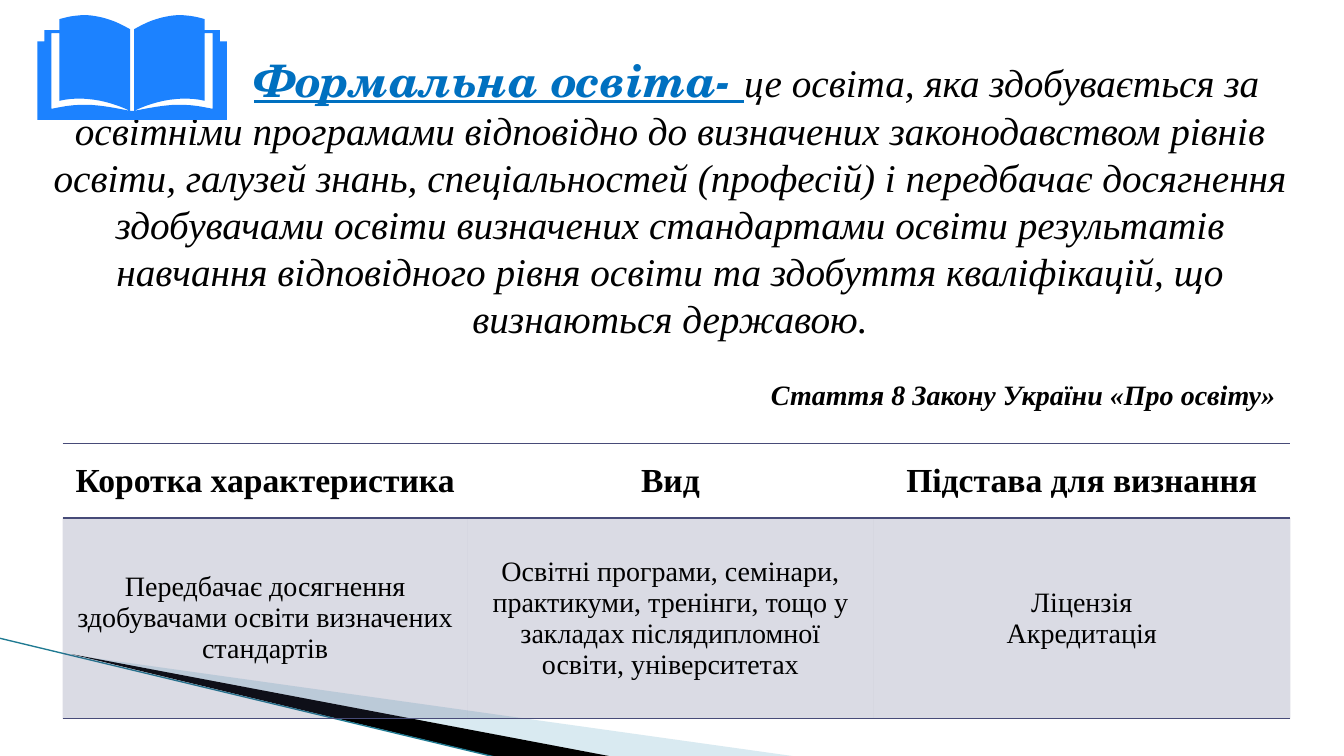
from lxml import etree
from pptx import Presentation
from pptx.dml.color import RGBColor
from pptx.enum.text import MSO_ANCHOR as Anchor, PP_ALIGN as Align
from pptx.oxml.ns import qn
from pptx.util import Inches, Pt

WIDTH, HEIGHT = 13.33, 7.5
SERIF, DISPLAY = "Times New Roman", "TeX Gyre Schola"
BLACK, BLUE, BOOK_BLUE, INDIGO = "000000", "0070C0", "1C82FF", "474B78"
UNITS = 1000  # outline units per inch

DEFINITION = (
    "це освіта, яка здобувається за освітніми програмами відповідно до "
    "визначених законодавством рівнів освіти, галузей знань, спеціальностей "
    "(професій) і передбачає досягнення здобувачами освіти визначених "
    "стандартами освіти результатів навчання відповідного рівня освіти та "
    "здобуття кваліфікацій, що визнаються державою."
)
HEADERS = ["Коротка характеристика", "Вид", "Підстава для визнання"]
DETAILS = [
    "Передбачає досягнення здобувачами освіти визначених стандартів",
    "Освітні програми, семінари, практикуми, тренінги, тощо у закладах "
    "післядипломної освіти, університетах",
    "Ліцензія\nАкредитація",
]

# Right half of the open book: points, or cubic curves of three points
BOOK_CENTRE = 1.31
BOOK_HALF = [
    (1.33, 1.1), ((1.64, 1.04), (1.79, 1.01), (2.11, 1.08)),
    (2.11, 0.33), (2.03, 0.33), (2.03, 1.0),
    ((1.81, 0.95), (1.56, 0.99), (1.33, 1.1)),
    (1.33, 0.29), ((1.47, 0.21), (1.6, 0.16), (1.77, 0.15)),
    ((1.84, 0.15), (1.93, 0.16), (2.03, 0.19)),
    (2.03, 0.3), (2.18, 0.3), (2.18, 0.41), (2.25, 0.41), (2.25, 1.19),
]


def colour(hex_code):
    return RGBColor.from_string(hex_code)


def set_alpha(fill_parent, percent):
    tint = fill_parent.find(".//" + qn("a:srgbClr"))
    etree.SubElement(tint, qn("a:alpha")).set("val", str(percent * 1000))


def add_text(paragraph, text, size=20, font=SERIF, color=BLACK,
             bold=False, italic=False, underline=False, align=Align.CENTER):
    paragraph.alignment = align
    run = paragraph.add_run()
    run.text = text
    style = run.font
    style.size, style.name = Pt(size), font
    style.bold, style.italic, style.underline = bold, italic, underline
    style.color.rgb = colour(color)


def add_outline(slide, points, fill, alpha=None):
    scaled = [(round(x * UNITS), round(y * UNITS)) for x, y in points]
    builder = slide.shapes.build_freeform(
        *scaled[0], scale=Inches(1) / UNITS)
    builder.add_line_segments(scaled[1:], close=True)
    outline = builder.convert_to_shape()
    outline.shadow.inherit = False
    outline.fill.solid()
    outline.fill.fore_color.rgb = colour(fill)
    outline.line.fill.background()
    if alpha:
        set_alpha(outline._element.spPr, alpha)


def flatten(segments, steps=12):
    points = []
    for segment in segments:
        if isinstance(segment[0], tuple):
            curve = [points[-1], *segment]
            for step in range(1, steps + 1):
                t = step / steps
                weights = ((1 - t) ** 3, 3 * t * (1 - t) ** 2,
                           3 * t * t * (1 - t), t ** 3)
                points.append(tuple(
                    sum(w * p[axis] for w, p in zip(weights, curve))
                    for axis in (0, 1)))
        else:
            points.append(segment)
    return points


def add_book(slide):
    right = flatten(BOOK_HALF)
    left = [(2 * BOOK_CENTRE - x, y) for x, y in reversed(right)]
    add_outline(slide, right + left, BOOK_BLUE)


def add_corner_sweep(slide):
    add_outline(slide, [(0.73, 6.5), (7.93, 7.51), (6.08, 7.51)], "A0CBDC", 40)
    add_outline(slide, [(0.71, 6.49), (6.09, 7.51), (4.96, 7.52)], BLACK)
    edge = slide.shapes.add_connector(
        1, Inches(-0.01), Inches(6.33), Inches(4.95), Inches(7.52))
    edge.line.color.rgb = colour("1F7A92")
    edge.line.width = Pt(0.95)
    etree.SubElement(edge._element.spPr, qn("a:effectLst"))


def add_definition(slide):
    title = slide.shapes.title
    title.left, title.top = Inches(0.25), Inches(0.43)
    title.width, title.height = Inches(12.79), Inches(3.74)
    frame = title.text_frame
    frame.word_wrap = True
    frame.vertical_anchor = Anchor.MIDDLE

    definition = frame.paragraphs[0]
    definition._p.get_or_add_pPr().set("indent", str(Inches(1.72)))
    add_text(definition, "Формальна освіта- ", size=32, font=DISPLAY,
             color=BLUE, bold=True, italic=True, underline=True)
    add_text(definition, DEFINITION, size=28, italic=True)

    citation = frame.add_paragraph()
    citation.space_before = Pt(26)
    citation._p.get_or_add_pPr().set("marR", str(Inches(0.29)))
    add_text(citation, "Стаття 8 Закону України «Про освіту»",
             bold=True, italic=True, align=Align.RIGHT)


def set_borders(cell, *visible):
    properties = cell._tc.get_or_add_tcPr()
    for position, side in enumerate(("lnL", "lnR", "lnT", "lnB")):
        border = etree.Element(qn("a:" + side), w=str(Pt(1)))
        if side in visible:
            fill = etree.SubElement(border, qn("a:solidFill"))
            etree.SubElement(fill, qn("a:srgbClr"), val=INDIGO)
        else:
            etree.SubElement(border, qn("a:noFill"))
        properties.insert(position, border)


def add_summary_table(slide):
    widths, heights = (4.02, 4.02, 4.14), (0.74, 1.99)
    table = slide.shapes.add_table(
        2, 3, Inches(0.62), Inches(4.4),
        Inches(sum(widths)), Inches(sum(heights))).table
    table.horz_banding = False
    for column, width in zip(table.columns, widths):
        column.width = Inches(width)
    for row, height in zip(table.rows, heights):
        row.height = Inches(height)

    for r, texts in enumerate((HEADERS, DETAILS)):
        for c, text in enumerate(texts):
            cell = table.cell(r, c)
            cell.vertical_anchor = Anchor.MIDDLE
            frame = cell.text_frame
            for i, line in enumerate(text.split("\n")):
                paragraph = frame.add_paragraph() if i else frame.paragraphs[0]
                add_text(paragraph, line, size=20 if r else 24, bold=r == 0)
            if r:
                cell.fill.solid()
                cell.fill.fore_color.rgb = colour(INDIGO)
                set_alpha(cell._tc.tcPr, 20)
            else:
                cell.fill.background()
            set_borders(cell, "lnT", "lnB")


def main():
    deck = Presentation()
    deck.slide_width, deck.slide_height = Inches(WIDTH), Inches(HEIGHT)
    slide = deck.slides.add_slide(deck.slide_layouts[5])

    # Background sweep, then the content
    add_corner_sweep(slide)
    add_definition(slide)
    add_summary_table(slide)
    add_book(slide)
    deck.save("out.pptx")


if __name__ == "__main__":
    main()
